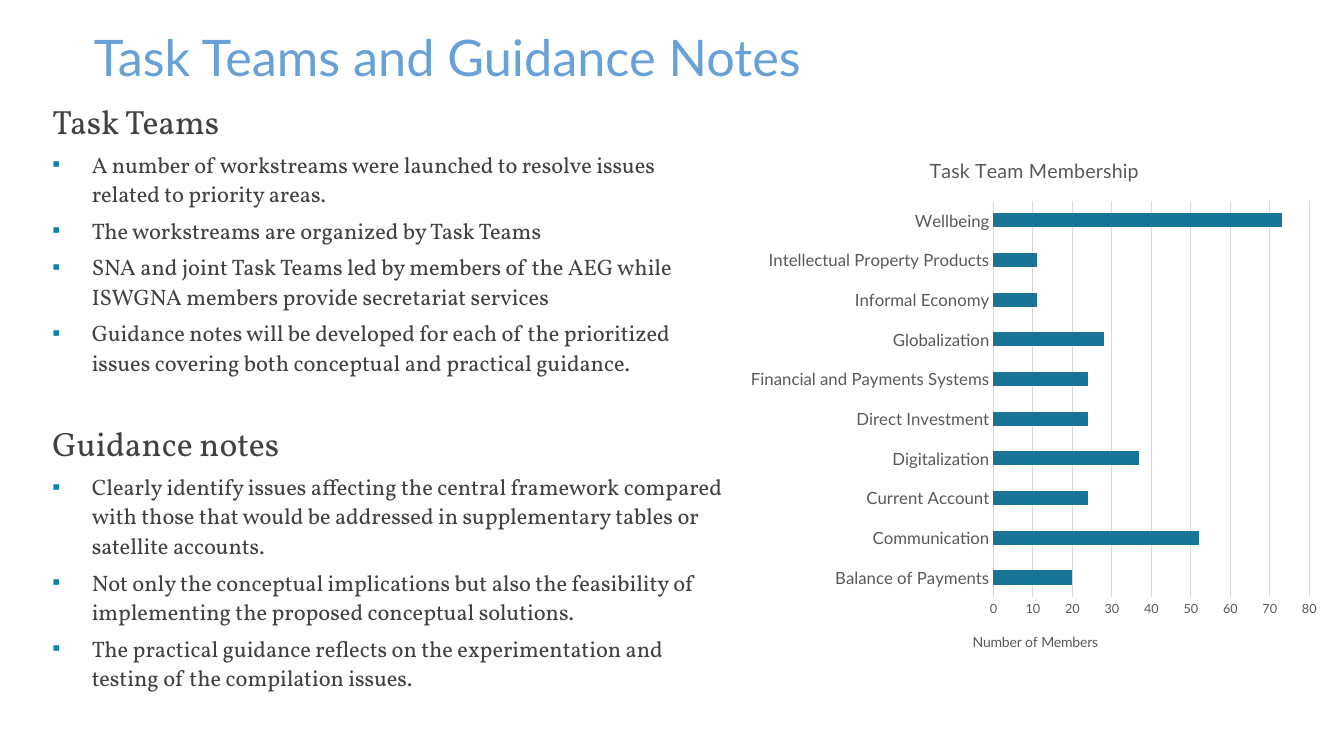
from lxml import etree
from pptx import Presentation
from pptx.chart.data import CategoryChartData
from pptx.dml.color import RGBColor
from pptx.enum.chart import XL_CHART_TYPE as ChartType, XL_TICK_MARK as Tick
from pptx.enum.text import MSO_ANCHOR as Anchor, MSO_AUTO_SIZE as AutoSize, PP_ALIGN as Align
from pptx.oxml.ns import qn
from pptx.util import Pt

PX = 9144  # 100 px to the inch
SANS, SERIF = "Lato", "Vollkorn"
COLORS = {"title": "68A1D7", "text": "414042", "bullet": "0984AF",
          "bar": "197598", "label": "595959", "grid": "D9D9D9"}

SECTIONS = [
    ("Task Teams", [
        "A number of workstreams were launched to resolve issues related to priority areas.",
        "The workstreams are organized by Task Teams",
        "SNA and joint Task Teams led by members of the AEG while ISWGNA members provide "
        "secretariat services",
        "Guidance notes will be developed for each of the prioritized issues covering both "
        "conceptual and practical guidance."]),
    ("Guidance notes", [
        "Clearly identify issues affecting the central framework compared with those that "
        "would be addressed in supplementary tables or satellite accounts.",
        "Not only the conceptual implications but also the feasibility of implementing the "
        "proposed conceptual solutions.",
        "The practical guidance reflects on the experimentation and testing of the "
        "compilation issues."]),
]
MEMBERS = {"Balance of Payments": 20, "Communication": 52, "Current Account": 24,
           "Digitalization": 37, "Direct Investment": 24,
           "Financial and Payments Systems": 24, "Globalization": 28,
           "Informal Economy": 11, "Intellectual Property Products": 11, "Wellbeing": 73}


def rgb(name):
    return RGBColor.from_string(COLORS[name])


def style(font, face, size, color):
    font.name, font.size, font.bold = face, Pt(size), False
    font.color.rgb = rgb(color)


def add_run(p, text, face, size, color):
    r = p.add_run()
    r.text = text
    style(r.font, face, size, color)


def place(sp, box, anchor):
    sp.left, sp.top, sp.width, sp.height = [v * PX for v in box]
    tf = sp.text_frame
    tf.word_wrap, tf.auto_size, tf.vertical_anchor = True, AutoSize.NONE, anchor
    return tf


def set_bullet(p, margin, indent, char=None):
    pPr = p._p.get_or_add_pPr()
    pPr.set("marL", str(margin * PX))
    pPr.set("indent", str(indent * PX))
    if char is None:
        etree.SubElement(pPr, qn("a:buNone"))
        return
    color = etree.SubElement(pPr, qn("a:buClr"))
    etree.SubElement(color, qn("a:srgbClr"), val=COLORS["bullet"])
    etree.SubElement(pPr, qn("a:buFont"), typeface="Arial")
    etree.SubElement(pPr, qn("a:buChar"), char=char)


def add_title(s, box):
    p = place(s.shapes.title, box, Anchor.BOTTOM).paragraphs[0]
    p.alignment, p.line_spacing = Align.LEFT, 0.9
    add_run(p, "Task Teams and Guidance Notes", SANS, 36, "title")


def add_body(s, box):
    tf = place(s.placeholders[1], box, Anchor.TOP)
    lines = [(text, i, is_head) for i, (head, items) in enumerate(SECTIONS)
             for text, is_head in [(head, True)] + [(item, False) for item in items]]
    for n, (text, section, is_head) in enumerate(lines):
        p = tf.add_paragraph() if n else tf.paragraphs[0]
        p.alignment, p.line_spacing = Align.LEFT, 1.1
        # A later section heading stands one line further down
        p.space_before = Pt(0 if n == 0 else 31 if is_head and section else 5)
        if is_head:
            set_bullet(p, 10, 0)
        else:
            set_bullet(p, 49, -39, "▪")
        add_run(p, text, SERIF, 24 if is_head else 16, "text")


def set_layout(parent, index, fractions, inner=False):
    """Fix a chart part at fractions (x, y and perhaps w, h) of the chart."""
    for old in parent.findall(qn("c:layout")):
        parent.remove(old)
    layout = etree.Element(qn("c:layout"))
    manual = etree.SubElement(layout, qn("c:manualLayout"))
    if inner:
        etree.SubElement(manual, qn("c:layoutTarget"), val="inner")
    for key in ("xMode", "yMode"):
        etree.SubElement(manual, qn("c:" + key), val="edge")
    for key, value in zip("xywh", fractions):
        etree.SubElement(manual, qn("c:" + key), val=str(value))
    parent.insert(index, layout)


def add_membership_chart(s, box):
    data = CategoryChartData()
    data.categories = list(MEMBERS)
    data.add_series("Series 1", list(MEMBERS.values()))
    frame = s.shapes.add_chart(ChartType.BAR_CLUSTERED, *[v * PX for v in box], data)
    chart = frame.chart
    style(chart.font, SANS, 10, "label")
    chart.has_legend = False

    # Titles
    chart.has_title = True
    add_run(chart.chart_title.text_frame.paragraphs[0],
            "Task Team Membership", SANS, 14, "label")
    cat, val = chart.category_axis, chart.value_axis
    val.has_title = True
    add_run(val.axis_title.text_frame.paragraphs[0], "Number of Members", SANS, 10, "label")
    set_layout(val.axis_title._element, 1, (0.39, 0.93))

    # Bars
    plot = chart.plots[0]
    plot.gap_width, plot.vary_by_categories = 182, False
    fill = plot.series[0].format.fill
    fill.solid()
    fill.fore_color.rgb = rgb("bar")
    set_layout(chart._chartSpace.chart.plotArea, 0, (0.43, 0.12, 0.54, 0.75), inner=True)

    # Axes and grid
    for axis, size in ((cat, 12), (val, 9)):
        style(axis.tick_labels.font, SANS, size, "label")
        axis.major_tick_mark = axis.minor_tick_mark = Tick.NONE
    val.minimum_scale, val.maximum_scale, val.major_unit = 0, 80, 10
    val.format.line.fill.background()
    for line in (cat.format.line, val.major_gridlines.format.line):
        line.color.rgb = rgb("grid")
        line.width = Pt(0.75)


def main():
    prs = Presentation()
    prs.slide_width, prs.slide_height = 1333 * PX, 750 * PX
    s = prs.slides.add_slide(prs.slide_layouts[1])
    add_title(s, (83, 43, 811, 49))
    add_body(s, (32, 91, 695, 628))
    add_membership_chart(s, (736, 136, 580, 525))
    prs.save("out.pptx")


if __name__ == "__main__":
    main()
